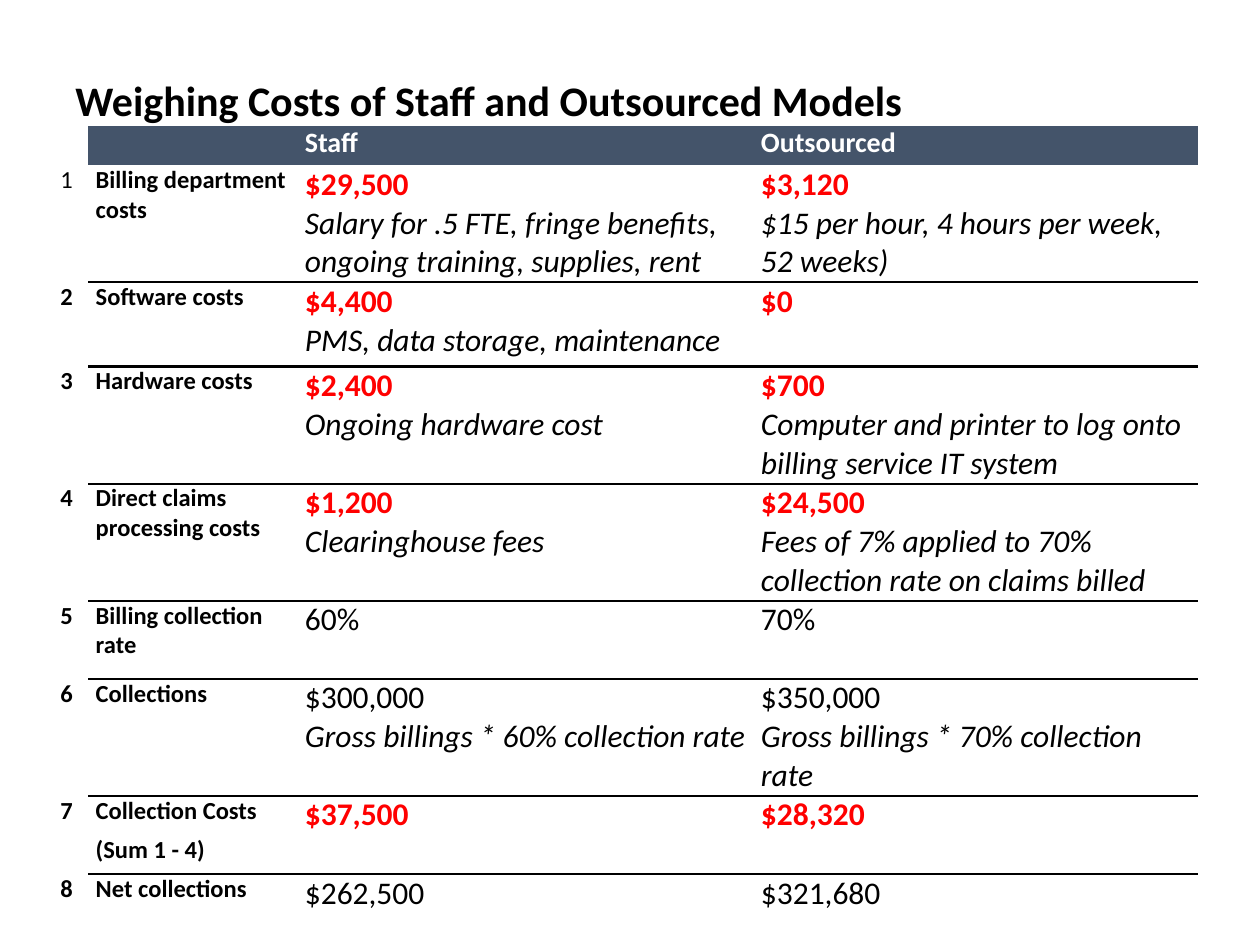
"""Build the slide weighing staff against outsourced billing costs."""
from dataclasses import dataclass

from lxml.etree import SubElement
from pptx import Presentation
from pptx.dml.color import RGBColor
from pptx.enum.text import MSO_ANCHOR
from pptx.oxml.ns import qn
from pptx.table import Table, _Cell
from pptx.util import Inches, Pt

BLACK = RGBColor(0x00, 0x00, 0x00)
WHITE = RGBColor(0xFF, 0xFF, 0xFF)
RED = RGBColor(0xFF, 0x00, 0x00)
NAVY = RGBColor(0x44, 0x54, 0x6A)
FONT = "Calibri"
ROW_H = 0.31
COL_WIDTHS = (0.28, 1.66, 3.62, 3.53)


@dataclass
class CostItem:
    label: str
    staff: str
    outsourced: str
    staff_note: str = ""
    outsourced_note: str = ""
    sublabel: str = ""
    is_cost: bool = True
    note_height: float = ROW_H


ITEMS = [
    CostItem("Billing department costs", "$29,500", "$3,120",
             "Salary for .5 FTE, fringe benefits, ongoing training, supplies, rent",
             "$15 per hour, 4 hours per week, 52 weeks)", note_height=0.62),
    CostItem("Software costs", "$4,400", "$0",
             "PMS, data storage, maintenance", note_height=0.36),
    CostItem("Hardware costs", "$2,400", "$700", "Ongoing hardware cost",
             "Computer and printer to log onto billing service IT system",
             note_height=0.62),
    CostItem("Direct claims processing costs", "$1,200", "$24,500",
             "Clearinghouse fees",
             "Fees of 7% applied to 70% collection rate on claims billed",
             note_height=0.62),
    CostItem("Billing collection rate", "60%", "70%", is_cost=False),
    CostItem("Collections", "$300,000", "$350,000",
             "Gross billings * 60% collection rate",
             "Gross billings * 70% collection rate",
             is_cost=False, note_height=0.62),
    CostItem("Collection Costs", "$37,500", "$28,320", sublabel="(Sum 1 - 4)"),
    CostItem("Net collections", "$262,500", "$321,680", is_cost=False,
             note_height=0),
]


def write(tf, text: str, size: float, color: RGBColor, bold=False, italic=False) -> None:
    tf.text = text
    for r in tf.paragraphs[0].runs:
        r.font.name = FONT
        r.font.size = Pt(size)
        r.font.bold = bold
        r.font.italic = italic
        r.font.color.rgb = color


def style_cell(cell: _Cell, fill: RGBColor, top=False, bottom=False) -> None:
    cell.margin_left = cell.margin_right = Inches(0.06)
    cell.margin_top = cell.margin_bottom = 0
    tc_pr = cell._tc.get_or_add_tcPr()
    for side, ruled in (("L", False), ("R", False), ("T", top), ("B", bottom)):
        ln = SubElement(tc_pr, qn(f"a:ln{side}"), w=str(Pt(1.5)))
        if ruled:
            solid = SubElement(ln, qn("a:solidFill"))
            SubElement(solid, qn("a:srgbClr"), val=str(BLACK))
        else:
            SubElement(ln, qn("a:noFill"))
    cell.fill.solid()
    cell.fill.fore_color.rgb = fill


def add_header(table: Table) -> None:
    for col, text in enumerate(("", "", "Staff", "Outsourced")):
        cell = table.cell(0, col)
        style_cell(cell, NAVY if col else WHITE)
        write(cell.text_frame, text, 16, WHITE, bold=True)


def add_item(table: Table, row: int, number: int, item: CostItem) -> None:
    has_notes = item.note_height > 0
    for col in range(len(COL_WIDTHS)):
        style_cell(table.cell(row, col), WHITE, top=col > 0 and number > 1,
                   bottom=col == 1 and has_notes and not item.sublabel)
        if has_notes:
            style_cell(table.cell(row + 1, col), WHITE, bottom=col > 0)

    write(table.cell(row, 0).text_frame, str(number), 14, BLACK, bold=number > 1)
    write(table.cell(row, 1).text_frame, item.label, 14, BLACK, bold=True)
    color = RED if item.is_cost else BLACK
    for col, text in ((2, item.staff), (3, item.outsourced)):
        write(table.cell(row, col).text_frame, text, 18, color, bold=item.is_cost)
    if not has_notes:
        return

    for col, text in ((2, item.staff_note), (3, item.outsourced_note)):
        write(table.cell(row + 1, col).text_frame, text, 18, BLACK, italic=True)
    if item.sublabel:
        write(table.cell(row + 1, 1).text_frame, item.sublabel, 14, BLACK, bold=True)
    else:
        table.cell(row, 1).merge(table.cell(row + 1, 1))


def add_title(s, text: str) -> None:
    sp = s.shapes.add_textbox(Inches(0.5), Inches(0.5), Inches(8.92), Inches(1))
    tf = sp.text_frame
    tf.word_wrap = True
    tf.vertical_anchor = MSO_ANCHOR.TOP
    tf.margin_top = Inches(0.14)
    write(tf, text, 24, BLACK, bold=True)
    tf.paragraphs[0].line_spacing = 0.9


def add_cost_table(s) -> None:
    heights = [ROW_H]
    for item in ITEMS:
        heights += [ROW_H, item.note_height] if item.note_height else [ROW_H]
    frame = s.shapes.add_table(len(heights), len(COL_WIDTHS), Inches(0.42), Inches(1),
                               Inches(sum(COL_WIDTHS)), Inches(sum(heights)))
    table = frame.table
    table.horz_banding = False
    for col, width in zip(table.columns, COL_WIDTHS):
        col.width = Inches(width)
    for row, height in zip(table.rows, heights):
        row.height = Inches(height)

    add_header(table)
    row = 1
    for number, item in enumerate(ITEMS, 1):
        add_item(table, row, number, item)
        row += 2 if item.note_height else 1


def main() -> None:
    prs = Presentation()
    prs.slide_width, prs.slide_height = Inches(10), Inches(7.5)
    s = prs.slides.add_slide(prs.slide_layouts[6])
    add_title(s, "Weighing Costs of Staff and Outsourced Models")
    add_cost_table(s)
    prs.save("out.pptx")


if __name__ == "__main__":
    main()
